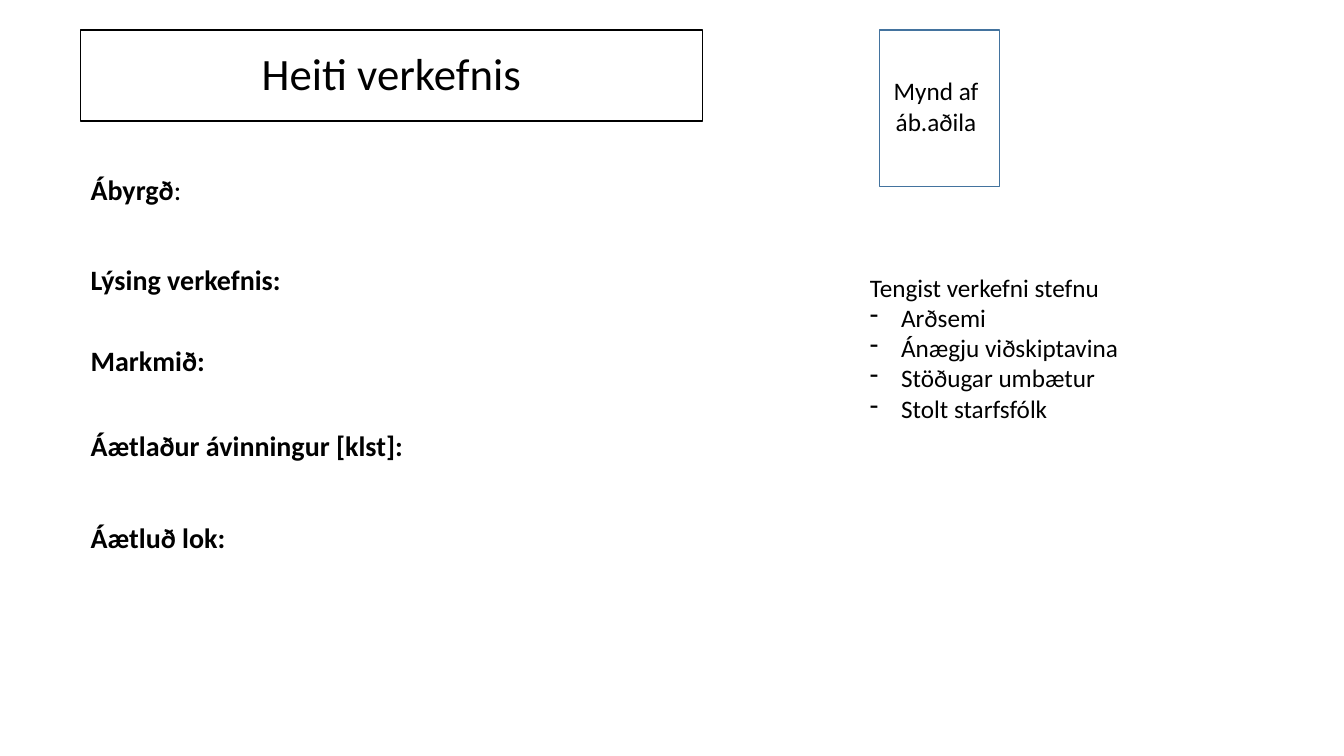
"""Build the project description slide with its fields, portrait frame and strategy links."""
from dataclasses import dataclass
from typing import Any

import lxml.etree
import pptx
import pptx.dml.color
import pptx.enum.shapes
import pptx.enum.text
import pptx.oxml.ns
import pptx.util

Cm = pptx.util.Cm
Pt = pptx.util.Pt
ALIGN = pptx.enum.text.PP_ALIGN
ANCHOR = pptx.enum.text.MSO_ANCHOR


@dataclass(frozen=True)
class Theme:
    font: str = "Calibri"
    ink: str = "000000"
    frame: str = "43739E"
    title_size: int = 32
    field_size: int = 20
    note_size: int = 18
    line_width: int = 1


@dataclass(frozen=True)
class Box:
    left: float
    top: float
    width: float
    height: float

    def lengths(self) -> tuple[int, int, int, int]:
        return Cm(self.left), Cm(self.top), Cm(self.width), Cm(self.height)


@dataclass(frozen=True)
class Field:
    label: str
    line_spacing: float
    space_before: float
    colon_bold: bool = True


THEME = Theme()
TITLE_BOX = Box(2.03, 0.76, 15.67, 2.29)
FIELDS_BOX = Box(2.03, 4.27, 23.01, 10.01)
PORTRAIT_BOX = Box(22.17, 0.76, 3.02, 3.94)
CAPTION_BOX = Box(22.17, 1.78, 2.84, 1.8)
STRATEGY_BOX = Box(21.67, 6.73, 10.24, 4.88)
HANGING_INDENT = Cm(0.79)

FIELDS = (
    Field("Ábyrgð", 0.97, 0, colon_bold=False),
    Field("Lýsing verkefnis", 0.8, 44),
    Field("Markmið", 0.8, 38.5),
    Field("Áætlaður ávinningur [klst]", 0.97, 38.5),
    Field("Áætluð lok", 0.97, 42.5),
)
STRATEGY_HEADING = "Tengist verkefni stefnu"
STRATEGY_GOALS = ("Arðsemi", "Ánægju viðskiptavina", "Stöðugar umbætur", "Stolt starfsfólk")


def apply_formats(target: Any, formats: dict[str, Any]) -> None:
    for attribute, value in formats.items():
        setattr(target, attribute, value)


def place(shape: Any, box: Box) -> None:
    apply_formats(shape, dict(zip(("left", "top", "width", "height"), box.lengths())))


def outline(shape: Any, color: str) -> None:
    shape.fill.background()
    shape.line.color.rgb = pptx.dml.color.RGBColor.from_string(color)
    shape.line.width = Pt(THEME.line_width)


def add_run(paragraph: Any, text: str, size: int, bold: bool = False) -> None:
    run = paragraph.add_run()
    run.text = text
    apply_formats(run.font, {"name": THEME.font, "size": Pt(size), "bold": bold})
    run.font.color.rgb = pptx.dml.color.RGBColor.from_string(THEME.ink)


def set_bullet(paragraph: Any, mark: str | None, indent: int) -> None:
    properties = paragraph._p.get_or_add_pPr()
    properties.set("marL", str(indent))
    properties.set("indent", str(-indent))
    tag = "a:buChar" if mark else "a:buNone"
    bullet = lxml.etree.SubElement(properties, pptx.oxml.ns.qn(tag))
    if mark:
        bullet.set("char", mark)


def next_paragraph(frame: Any, index: int) -> Any:
    return frame.add_paragraph() if index else frame.paragraphs[0]


def add_text_frame(slide: Any, box: Box) -> Any:
    frame = slide.shapes.add_textbox(*box.lengths()).text_frame
    frame.word_wrap = True
    return frame


def fill_title(title: Any) -> None:
    place(title, TITLE_BOX)
    outline(title, THEME.ink)
    title.text_frame.vertical_anchor = ANCHOR.MIDDLE
    heading = title.text_frame.paragraphs[0]
    apply_formats(heading, {"alignment": ALIGN.CENTER, "line_spacing": 0.9})
    add_run(heading, "Heiti verkefnis", THEME.title_size)


def fill_fields(body: Any) -> None:
    place(body, FIELDS_BOX)
    frame = body.text_frame
    apply_formats(frame, {"auto_size": pptx.enum.text.MSO_AUTO_SIZE.NONE,
                          "vertical_anchor": ANCHOR.TOP})
    for index, field in enumerate(FIELDS):
        paragraph = next_paragraph(frame, index)
        set_bullet(paragraph, None, 0)
        apply_formats(paragraph, {"line_spacing": field.line_spacing,
                                  "space_before": Pt(field.space_before)})
        add_run(paragraph, field.label, THEME.field_size, bold=True)
        add_run(paragraph, ":", THEME.field_size, bold=field.colon_bold)


def add_portrait(slide: Any) -> None:
    portrait = slide.shapes.add_shape(
        pptx.enum.shapes.MSO_SHAPE.RECTANGLE, *PORTRAIT_BOX.lengths())
    portrait.shadow.inherit = False
    outline(portrait, THEME.frame)
    caption = add_text_frame(slide, CAPTION_BOX).paragraphs[0]
    caption.alignment = ALIGN.CENTER
    add_run(caption, "Mynd af áb.aðila", THEME.note_size)


def add_strategy(slide: Any) -> None:
    frame = add_text_frame(slide, STRATEGY_BOX)
    for index, text in enumerate((STRATEGY_HEADING, *STRATEGY_GOALS)):
        paragraph = next_paragraph(frame, index)
        if index:
            set_bullet(paragraph, "-", HANGING_INDENT)
        add_run(paragraph, text, THEME.note_size)


def main() -> None:
    presentation = pptx.Presentation()
    apply_formats(presentation, {"slide_width": Cm(33.87), "slide_height": Cm(19.05)})
    slide = presentation.slides.add_slide(presentation.slide_layouts[1])
    fill_title(slide.shapes.title)
    fill_fields(slide.placeholders[1])
    add_portrait(slide)
    add_strategy(slide)
    presentation.save("out.pptx")


if __name__ == "__main__":
    main()
